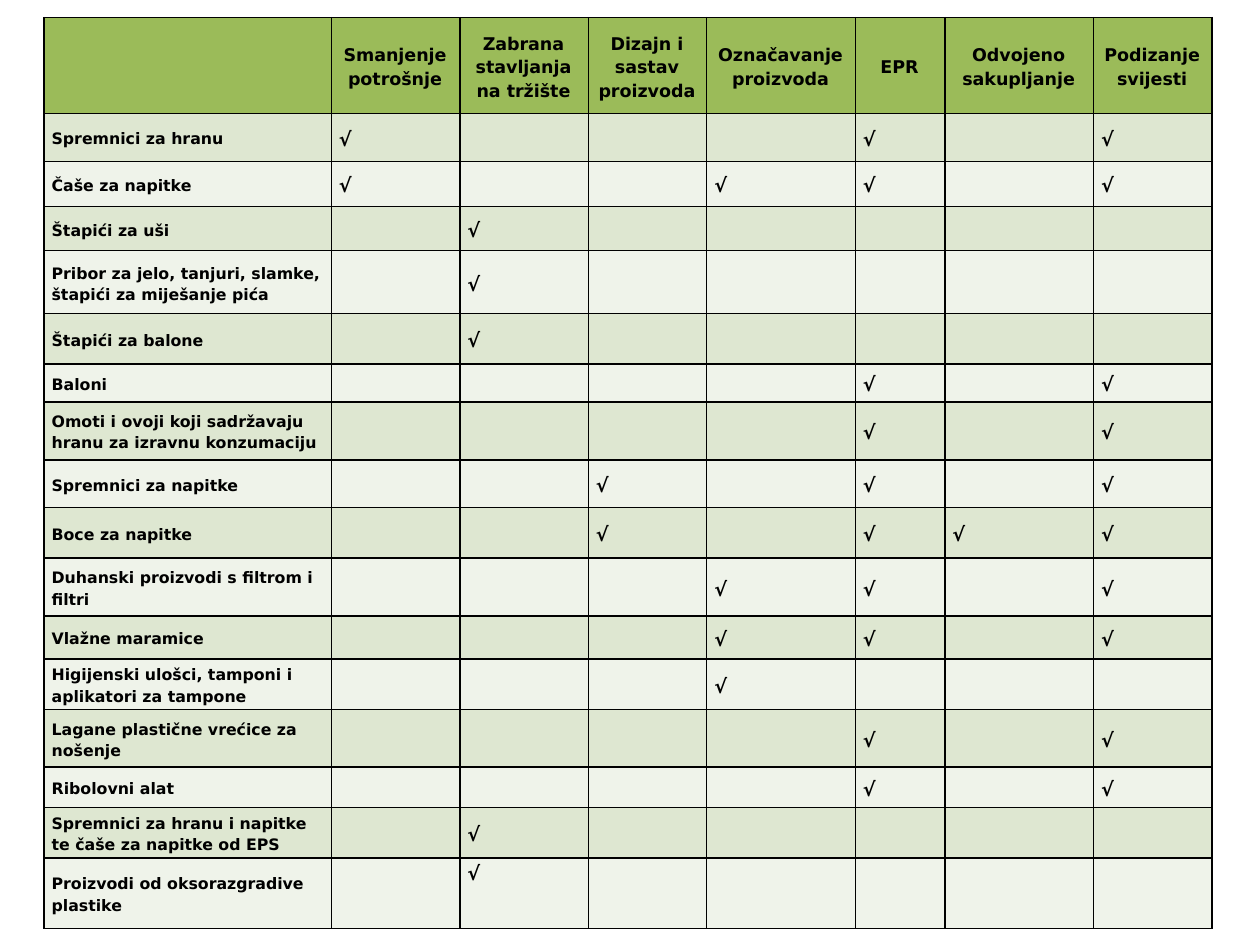
from lxml.etree import SubElement
from pptx import Presentation
from pptx.dml.color import RGBColor
from pptx.enum.text import MSO_ANCHOR as Anchor, PP_ALIGN as Align
from pptx.oxml.ns import qn
from pptx.util import Inches, Pt

FONT = "DejaVu Sans"
BLACK, HEADER_GREEN = "000000", "9BBB59"
BAND_COLOURS = ["DEE7D1", "EFF3EA"]
CHECK = "√"

COLUMN_WIDTHS = [2.28, 1.02, 1.02, 0.94, 1.18, 0.71, 1.18, 0.94]
HEADER_HEIGHT = 0.76
MEASURES = ["Smanjenje potrošnje", "Zabrana stavljanja na tržište",
            "Dizajn i sastav proizvoda", "Označavanje proizvoda", "EPR",
            "Odvojeno sakupljanje", "Podizanje svijesti"]

# Product, row height, columns that hold a check mark
PRODUCTS = [
    ("Spremnici za hranu", 0.38, [1, 5, 7]),
    ("Čaše za napitke", 0.36, [1, 4, 5, 7]),
    ("Štapići za uši", 0.35, [2]),
    ("Pribor za jelo, tanjuri, slamke, štapići za miješanje pića", 0.5, [2]),
    ("Štapići za balone", 0.4, [2]),
    ("Baloni", 0.3, [5, 7]),
    ("Omoti i ovoji koji sadržavaju hranu za izravnu konzumaciju", 0.46, [5, 7]),
    ("Spremnici za napitke", 0.38, [3, 5, 7]),
    ("Boce za napitke", 0.4, [3, 5, 6, 7]),
    ("Duhanski proizvodi s filtrom i filtri", 0.46, [4, 5, 7]),
    ("Vlažne maramice", 0.34, [4, 5, 7]),
    ("Higijenski ulošci, tamponi i aplikatori za tampone", 0.4, [4]),
    ("Lagane plastične vrećice za nošenje", 0.46, [5, 7]),
    ("Ribolovni alat", 0.32, [5, 7]),
    ("Spremnici za hranu i napitke te čaše za napitke od EPS", 0.4, [2]),
    ("Proizvodi od oksorazgradive plastike", 0.56, [2]),
]


def colour(value):
    return RGBColor.from_string(value)


def add_borders(cell):
    properties = cell._tc.get_or_add_tcPr()
    for position, side in enumerate(("a:lnL", "a:lnR", "a:lnT", "a:lnB")):
        line = properties.makeelement(qn(side), {"w": str(Pt(1))})
        fill = SubElement(line, qn("a:solidFill"))
        SubElement(fill, qn("a:srgbClr"), val=BLACK)
        properties.insert(position, line)


def format_cell(cell, fill, text="", size=11, align=Align.LEFT):
    cell.fill.solid()
    cell.fill.fore_color.rgb = colour(fill)
    add_borders(cell)
    cell.vertical_anchor = Anchor.MIDDLE
    cell.margin_left, cell.margin_right = Inches(0.06), Inches(0.07)
    cell.margin_top, cell.margin_bottom = Inches(0.01), 0
    paragraph = cell.text_frame.paragraphs[0]
    if not text:
        # Small empty line, so that it does not stretch the row
        paragraph._p.get_or_add_endParaRPr().set("sz", "900")
        return
    paragraph.text = text
    paragraph.alignment = align
    paragraph.line_spacing = 1.15
    paragraph.space_after = Pt(10)
    font = paragraph.runs[0].font
    font.name, font.size, font.bold = FONT, Pt(size), True
    font.color.rgb = colour(BLACK)


def add_measures_table(slide):
    heights = [HEADER_HEIGHT] + [height for _, height, _ in PRODUCTS]
    table = slide.shapes.add_table(
        len(heights), len(COLUMN_WIDTHS), Inches(0.35), Inches(0.14),
        Inches(sum(COLUMN_WIDTHS)), Inches(sum(heights))).table
    for column, width in zip(table.columns, COLUMN_WIDTHS):
        column.width = Inches(width)
    for row, height in zip(table.rows, heights):
        row.height = Inches(height)

    # Header row
    for column, measure in enumerate([""] + MEASURES):
        format_cell(table.cell(0, column), HEADER_GREEN, measure, 10, Align.CENTER)

    # Product rows in alternating bands
    for row, (product, _, checked) in enumerate(PRODUCTS, start=1):
        fill = BAND_COLOURS[(row - 1) % 2]
        format_cell(table.cell(row, 0), fill, product, 9)
        for column in range(1, len(COLUMN_WIDTHS)):
            text = CHECK if column in checked else ""
            format_cell(table.cell(row, column), fill, text)

    # The last check mark sits at the top of its cell
    table.cell(len(PRODUCTS), 2).vertical_anchor = Anchor.TOP


def main():
    presentation = Presentation()
    presentation.slide_width, presentation.slide_height = Inches(10), Inches(7.5)
    slide = presentation.slides.add_slide(presentation.slide_layouts[6])
    add_measures_table(slide)
    presentation.save("out.pptx")


if __name__ == "__main__":
    main()
